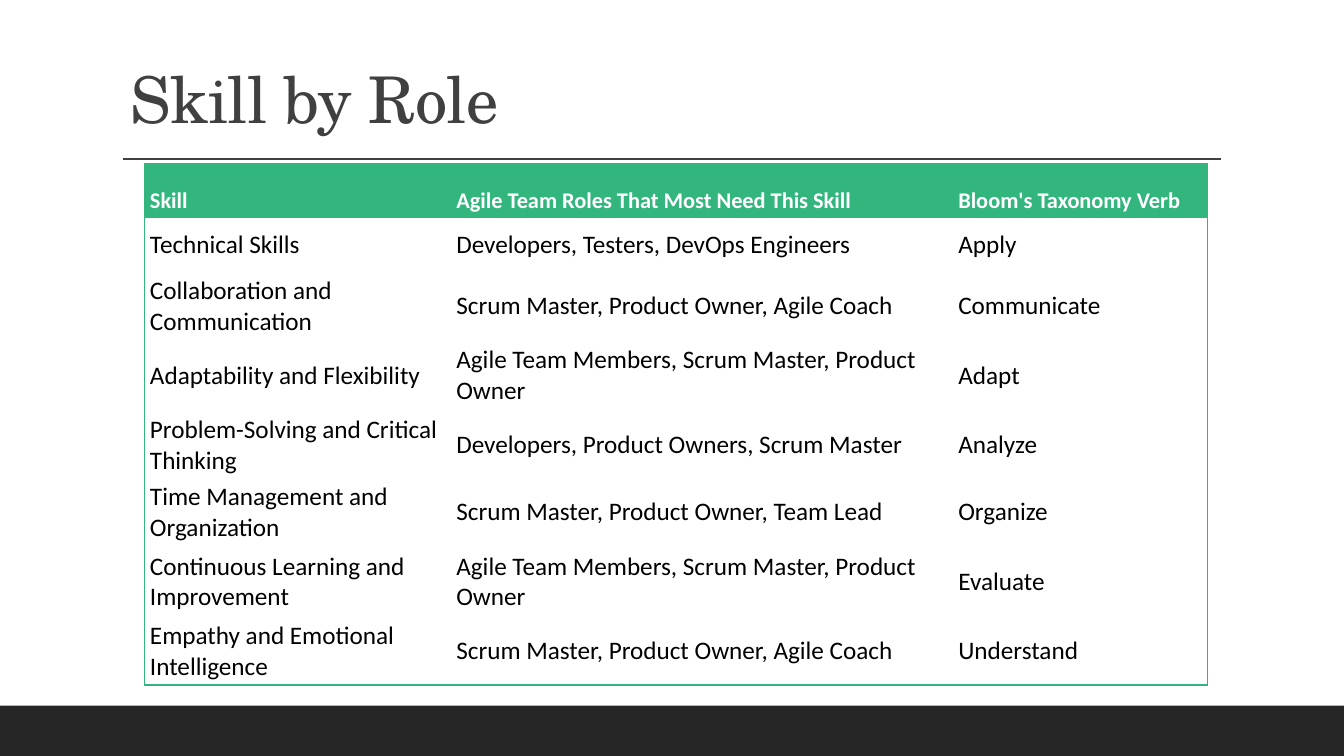
from dataclasses import dataclass

import lxml.etree
import pptx
import pptx.dml.color
import pptx.enum.shapes
import pptx.enum.text
import pptx.oxml.ns
import pptx.slide
import pptx.table
import pptx.text.text
import pptx.util

Cm = pptx.util.Cm
Pt = pptx.util.Pt
RGBColor = pptx.dml.color.RGBColor
Anchor = pptx.enum.text.MSO_ANCHOR

GREEN = RGBColor(0x33, 0xB6, 0x7D)
CHARCOAL = RGBColor(0x26, 0x26, 0x26)
GREY = RGBColor(0x40, 0x40, 0x40)
BLACK = RGBColor(0x00, 0x00, 0x00)
WHITE = RGBColor(0xFF, 0xFF, 0xFF)

TITLE_FONT = "TeX Gyre Schola"
TABLE_FONT = "Calibri"

PAGE_WIDTH = Cm(33.87)
PAGE_HEIGHT = Cm(19.05)
FOOTER_HEIGHT = Cm(1.27)


@dataclass(frozen=True)
class TextStyle:
    font: str
    size: float
    color: RGBColor
    bold: bool = False


@dataclass(frozen=True)
class SkillRow:
    skill: str
    roles: str
    verb: str
    height: float  # centimetres

    @property
    def texts(self) -> tuple[str, str, str]:
        return self.skill, self.roles, self.verb


TITLE_STYLE = TextStyle(TITLE_FONT, 46, GREY)
HEADER_STYLE = TextStyle(TABLE_FONT, 16, WHITE, bold=True)
BODY_STYLE = TextStyle(TABLE_FONT, 18, BLACK)

COLUMN_WIDTHS = (7.72, 12.65, 6.4)
ROWS = (
    SkillRow("Skill", "Agile Team Roles That Most Need This Skill", "Bloom's Taxonomy Verb", 1.37),
    SkillRow("Technical Skills", "Developers, Testers, DevOps Engineers", "Apply", 1.37),
    SkillRow("Collaboration and Communication", "Scrum Master, Product Owner, Agile Coach",
             "Communicate", 1.7),
    SkillRow("Adaptability and Flexibility", "Agile Team Members, Scrum Master, Product Owner",
             "Adapt", 1.8),
    SkillRow("Problem-Solving and Critical Thinking", "Developers, Product Owners, Scrum Master",
             "Analyze", 1.7),
    SkillRow("Time Management and Organization", "Scrum Master, Product Owner, Team Lead",
             "Organize", 1.7),
    SkillRow("Continuous Learning and Improvement", "Agile Team Members, Scrum Master, Product Owner",
             "Evaluate", 1.8),
    SkillRow("Empathy and Emotional Intelligence", "Scrum Master, Product Owner, Agile Coach",
             "Understand", 1.7),
)


def add_span(para: pptx.text.text._Paragraph, text: str, style: TextStyle) -> pptx.text.text._Run:
    span = para.add_run()
    span.text = text
    span.font.name = style.font
    span.font.size = Pt(style.size)
    span.font.bold = style.bold
    span.font.color.rgb = style.color
    return span


def add_footer_band(page: pptx.slide.Slide) -> None:
    band = page.shapes.add_shape(
        pptx.enum.shapes.MSO_SHAPE.RECTANGLE,
        0, PAGE_HEIGHT - FOOTER_HEIGHT, PAGE_WIDTH, FOOTER_HEIGHT)
    band.shadow.inherit = False
    band.fill.solid()
    band.fill.fore_color.rgb = CHARCOAL
    band.line.fill.background()


def add_title_rule(page: pptx.slide.Slide) -> None:
    rule = page.shapes.add_connector(
        pptx.enum.shapes.MSO_CONNECTOR.STRAIGHT, Cm(3.1), Cm(4.01), Cm(30.78), Cm(4.01))
    rule.line.color.rgb = GREY
    rule.line.width = Pt(1)
    lxml.etree.SubElement(rule._element.spPr, pptx.oxml.ns.qn("a:effectLst"))


def add_title(page: pptx.slide.Slide, text: str) -> None:
    box = page.shapes.add_textbox(Cm(3.05), Cm(0.79), Cm(27.94), Cm(2.79))
    frame = box.text_frame
    frame.word_wrap = True
    frame.vertical_anchor = Anchor.BOTTOM
    para = frame.paragraphs[0]
    para.line_spacing = 0.9
    span = add_span(para, text, TITLE_STYLE)
    span._r.get_or_add_rPr().set("spc", "-50")


def set_borders(cell: pptx.table._Cell, green_sides: dict[str, bool]) -> None:
    """Draw a green line on the chosen sides and none on the others."""
    qn = pptx.oxml.ns.qn
    properties = cell._tc.get_or_add_tcPr()
    for side, is_green in green_sides.items():
        border = lxml.etree.SubElement(properties, qn(f"a:ln{side}"), w=str(Pt(1)))
        if is_green:
            fill = lxml.etree.SubElement(border, qn("a:solidFill"))
            lxml.etree.SubElement(fill, qn("a:srgbClr"), val=str(GREEN))
        else:
            lxml.etree.SubElement(border, qn("a:noFill"))


def fill_cell(cell: pptx.table._Cell, text: str, is_header: bool) -> None:
    cell.margin_left = cell.margin_right = Cm(0.13)
    cell.margin_top = cell.margin_bottom = Cm(0.08)
    cell.vertical_anchor = Anchor.BOTTOM if is_header else Anchor.MIDDLE
    if is_header:
        cell.fill.solid()
        cell.fill.fore_color.rgb = GREEN
    else:
        cell.fill.background()
    add_span(cell.text_frame.paragraphs[0], text, HEADER_STYLE if is_header else BODY_STYLE)


def add_skill_table(page: pptx.slide.Slide) -> None:
    table = page.shapes.add_table(
        len(ROWS), len(COLUMN_WIDTHS), Cm(3.65), Cm(4.12),
        Cm(sum(COLUMN_WIDTHS)), Cm(sum(row.height for row in ROWS))).table
    table.horz_banding = False
    for column, width in zip(table.columns, COLUMN_WIDTHS):
        column.width = Cm(width)
    last_row, last_column = len(ROWS) - 1, len(COLUMN_WIDTHS) - 1
    for row_index, row in enumerate(ROWS):
        table.rows[row_index].height = Cm(row.height)
        for column_index, text in enumerate(row.texts):
            cell = table.cell(row_index, column_index)
            set_borders(cell, {
                "L": column_index == 0,
                "R": column_index == last_column,
                "T": row_index == 0,
                "B": row_index == last_row,
            })
            fill_cell(cell, text, is_header=row_index == 0)


def main() -> None:
    deck = pptx.Presentation()
    deck.slide_width = PAGE_WIDTH
    deck.slide_height = PAGE_HEIGHT
    page = deck.slides.add_slide(deck.slide_layouts[6])
    add_footer_band(page)
    add_title_rule(page)
    add_title(page, "Skill by Role")
    add_skill_table(page)
    deck.save("out.pptx")


if __name__ == "__main__":
    main()
